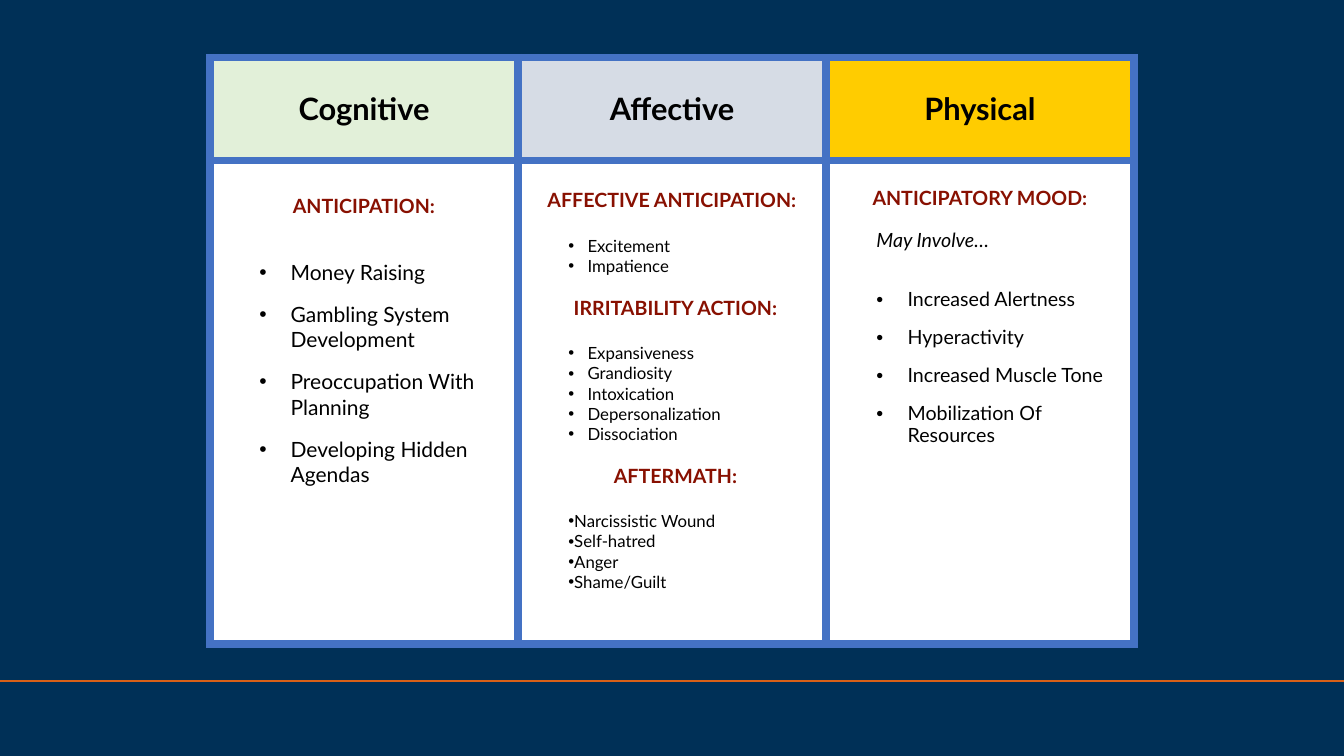
from lxml.etree import SubElement
from pptx import Presentation
from pptx.dml.color import RGBColor
from pptx.enum.shapes import MSO_CONNECTOR
from pptx.enum.text import MSO_ANCHOR, PP_ALIGN
from pptx.oxml import parse_xml
from pptx.oxml.ns import nsdecls, qn
from pptx.util import Inches, Pt

COLORS = {"navy": "003057", "orange": "D86018", "border": "4472C4", "black": "000000",
          "maroon": "881001", "white": "FFFFFF", "green": "E2F0D9", "grey": "D6DCE5", "gold": "FFCC00"}
FORMATS = {
    "title": {"size": Pt(22), "bold": True, "italic": False},
    "heading": {"size": Pt(14), "bold": True, "italic": False},
    "lead": {"size": Pt(14), "bold": False, "italic": True},
    "large": {"size": Pt(15), "bold": False, "italic": False},
    "medium": {"size": Pt(14), "bold": False, "italic": False},
    "small": {"size": Pt(12), "bold": False, "italic": False},
}
INDENTS = {"wide": (0.76, -0.31), "narrow": (0.64, -0.19), "tight": (0.45, 0), "shifted": (0.07, 0), "none": (0, 0)}


def rgb(name):
    return RGBColor.from_string(COLORS[name])


def write_line(paragraph, text, style, indent="none", before=0, spacing=1.0):
    centred = style in ("title", "heading")
    settings = {"alignment": PP_ALIGN.CENTER if centred else PP_ALIGN.LEFT, "level": 0 if centred else 1,
                "space_before": Pt(before), "line_spacing": spacing}
    for key, value in settings.items():
        setattr(paragraph, key, value)
    properties = paragraph._p.get_or_add_pPr()
    for key, length in zip(("marL", "indent"), INDENTS[indent]):
        properties.set(key, str(Inches(length)))
    if centred or style == "lead":
        SubElement(properties, qn("a:buNone"))
    else:
        SubElement(properties, qn("a:buFont")).set("typeface", "Arial")
        SubElement(properties, qn("a:buChar")).set("char", "•")
    run = paragraph.add_run()
    run.text = text
    for key, value in {"name": "Lato", **FORMATS[style]}.items():
        setattr(run.font, key, value)
    run.font.color.rgb = rgb("maroon" if style == "heading" else "black")


columns = [
    {"title": "Cognitive", "fill": "green", "inset": 0.04, "top": 0.34, "spacing": 1.0, "groups": [
        ("heading", "none", 0, 0, ["ANTICIPATION:"]),
        ("large", "wide", 30, 12, ["Money Raising", "Gambling System Development",
                                   "Preoccupation With Planning", "Developing Hidden Agendas"])]},
    {"title": "Affective", "fill": "grey", "inset": 0.05, "top": 0.28, "spacing": 1.0, "groups": [
        ("heading", "none", 0, 0, ["AFFECTIVE ANTICIPATION:"]),
        ("small", "narrow", 16.8, 0, ["Excitement", "Impatience"]),
        ("heading", "shifted", 14.4, 0, ["IRRITABILITY ACTION:"]),
        ("small", "narrow", 16.8, 0, ["Expansiveness", "Grandiosity", "Intoxication",
                                      "Depersonalization", "Dissociation"]),
        ("heading", "shifted", 14.4, 0, ["AFTERMATH:"]),
        ("small", "tight", 16.8, 0, ["Narcissistic Wound", "Self-hatred", "Anger", "Shame/Guilt"])]},
    {"title": "Physical", "fill": "gold", "inset": 0.05, "top": 0.28, "spacing": 0.9, "groups": [
        ("heading", "none", 0, 0, ["ANTICIPATORY MOOD:"]),
        ("lead", "tight", 15.1, 0, ["May Involve…"]),
        ("medium", "wide", 27.1, 12, ["Increased Alertness", "Hyperactivity",
                                      "Increased Muscle Tone", "Mobilization Of Resources"])]},
]

deck = Presentation()
deck.slide_width, deck.slide_height = Inches(13.33), Inches(7.5)
slide = deck.slides.add_slide(deck.slide_layouts[6])
slide.background.fill.solid()
slide.background.fill.fore_color.rgb = rgb("navy")

footer_y = Inches(6.76)
footer_rule = slide.shapes.add_connector(MSO_CONNECTOR.STRAIGHT, 0, footer_y, deck.slide_width, footer_y)
footer_rule.line.color.rgb = rgb("orange")
footer_rule.line.width = Pt(1.5)
SubElement(footer_rule._element.spPr, qn("a:effectLst"))

column_width = Inches(3.055)
row_heights = [Inches(1.02), Inches(4.8)]
grid_width = column_width * len(columns)
phases = slide.shapes.add_table(len(row_heights), len(columns), (deck.slide_width - grid_width) // 2,
                                Inches(0.57), grid_width, sum(row_heights)).table
phases.horz_banding = False
for row, height in zip(phases.rows, row_heights):
    row.height = height

for index, column in enumerate(columns):
    phases.columns[index].width = column_width
    header, body = phases.cell(0, index), phases.cell(1, index)
    for cell, fill, inset, top, anchor in (
            (header, column["fill"], 0.05, 0.05, MSO_ANCHOR.MIDDLE),
            (body, "white", column["inset"], column["top"], MSO_ANCHOR.TOP)):
        cell.fill.solid()
        cell.fill.fore_color.rgb = rgb(fill)
        layout = {"margin_left": Inches(inset), "margin_right": Inches(inset), "margin_top": Inches(top),
                  "margin_bottom": Inches(inset), "vertical_anchor": anchor}
        for key, value in layout.items():
            setattr(cell, key, value)
        for position, side in enumerate(("lnL", "lnR", "lnT", "lnB")):
            cell._tc.get_or_add_tcPr().insert(position, parse_xml(
                f'<a:{side} {nsdecls("a")} w="{Pt(6)}"><a:solidFill>'
                f'<a:srgbClr val="{COLORS["border"]}"/></a:solidFill></a:{side}>'))
    write_line(header.text_frame.paragraphs[0], column["title"], "title")
    paragraph = body.text_frame.paragraphs[0]
    for style, indent, group_gap, line_gap, lines in column["groups"]:
        for number, text in enumerate(lines):
            paragraph = paragraph or body.text_frame.add_paragraph()
            write_line(paragraph, text, style, indent, line_gap if number else group_gap, column["spacing"])
            paragraph = None

deck.save("out.pptx")
